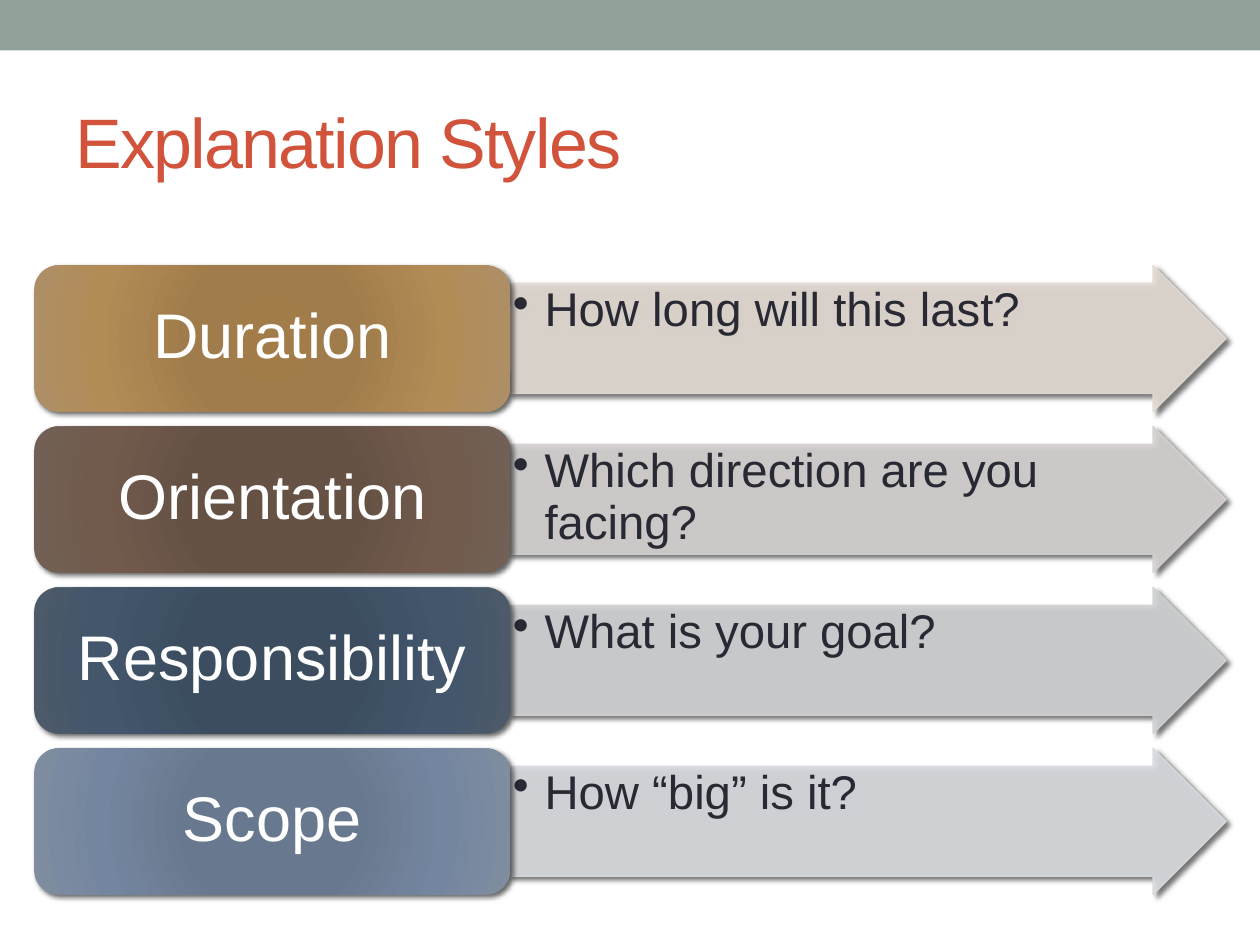
import pptx
import pptx.util
import pptx.dml.color
import pptx.enum.shapes
import pptx.enum.text
import pptx.oxml
import pptx.oxml.ns

Cm, Pt = pptx.util.Cm, pptx.util.Pt
Kind = pptx.enum.shapes.MSO_SHAPE
Anchor = pptx.enum.text.MSO_ANCHOR
Align = pptx.enum.text.PP_ALIGN
NS = pptx.oxml.ns.nsdecls("a")
qn = pptx.oxml.ns.qn

# Content: label, question, gradient colours, arrow colour
TITLE = "Explanation Styles"
ROWS = [
    ("Duration", "How long will this last?",
     ("A37D49", "A07C4C", "B38B55", "AD8F67"), "E3DBD3"),
    ("Orientation", "Which direction are you facing?",
     ("685044", "665145", "725A4D", "726056"), "D5D2D1"),
    ("Responsibility", "What is your goal?",
     ("3B4D61", "3C4D60", "43566B", "4C5A6A"), "D0D2D4"),
    ("Scope", "How “big” is it?",
     ("677790", "68788E", "74869F", "808DA0"), "D8DBDF"),
]
COLORS = {"band": "93A299", "title": "D2533C", "text": "292934",
          "label": "FFFFFF", "shadow": "000000"}
STOPS = (0, 34, 70, 100)

# Grid in centimetres
LEFT, TOP, STEP, HIGH = 0.69, 5.35, 3.245, 2.95
BOX, ARROW = 9.6, 14.43


def rgb(code):
    return pptx.dml.color.RGBColor.from_string(code)


def add(shapes, kind, x, y, w, h):
    shape = shapes.add_shape(kind, Cm(x), Cm(y), Cm(w), Cm(h))
    shape.shadow.inherit = False
    shape.line.fill.background()
    return shape


def shade(shape):
    effect = shape._element.spPr.find(qn("a:effectLst"))
    effect.append(pptx.oxml.parse_xml(
        f'<a:outerShdw {NS} blurRad="{Pt(3)}" dist="{Pt(2)}" dir="2700000" '
        f'rotWithShape="0"><a:srgbClr val="{COLORS["shadow"]}">'
        '<a:alpha val="60000"/></a:srgbClr></a:outerShdw>'))


def blend(shape, codes):
    shape.fill.gradient()
    props = shape._element.spPr
    stops = "".join(f'<a:gs pos="{pos * 1000}"><a:srgbClr val="{code}"/></a:gs>'
                    for pos, code in zip(STOPS, codes))
    props.replace(props.find(qn("a:gradFill")), pptx.oxml.parse_xml(
        f'<a:gradFill {NS} rotWithShape="1"><a:gsLst>{stops}</a:gsLst>'
        '<a:path path="circle"><a:fillToRect l="100000" t="100000" '
        'r="100000" b="100000"/></a:path></a:gradFill>'))


def tint(shape, code):
    shape.fill.solid()
    shape.fill.fore_color.rgb = rgb(code)
    shape.line.color.rgb = rgb(code)
    shape.line.width = Pt(0.75)
    for color in shape._element.spPr.iter(qn("a:srgbClr")):
        color.append(pptx.oxml.parse_xml(f'<a:alpha {NS} val="90000"/>'))


def write(shape, text, size, color, align, anchor, pads=None):
    frame = shape.text_frame
    frame.word_wrap = True
    frame.vertical_anchor = anchor
    if pads:
        (frame.margin_left, frame.margin_top,
         frame.margin_right, frame.margin_bottom) = map(Cm, pads)
    frame.text = text
    para = frame.paragraphs[0]
    para.alignment = align
    font = para.runs[0].font
    font.name, font.size = "Arial", Pt(size)
    font.color.rgb = rgb(color)
    return para


def bullet(para):
    props = para._p.get_or_add_pPr()
    props.set("marL", str(Cm(0.64)))
    props.set("indent", str(-Cm(0.64)))
    props.append(pptx.oxml.parse_xml(f'<a:buChar {NS} char="•"/>'))


deck = pptx.Presentation()
deck.slide_width, deck.slide_height = Cm(25.4), Cm(19.05)
shapes = deck.slides.add_slide(deck.slide_layouts[6]).shapes

# Top band and title
band = add(shapes, Kind.RECTANGLE, 0, 0, 25.4, 1.02)
band.fill.solid()
band.fill.fore_color.rgb = rgb(COLORS["band"])
head = shapes.add_textbox(Cm(1.27), Cm(1.47), Cm(22.86), Cm(2.74))
para = write(head, TITLE, 40, COLORS["title"], Align.LEFT, Anchor.MIDDLE)
para.runs[0]._r.get_or_add_rPr().set("spc", "-100")

# One arrow and one label box per row
for i, (label, ask, codes, pale) in enumerate(ROWS):
    y = TOP + i * STEP
    arrow = add(shapes, Kind.RIGHT_ARROW, LEFT + BOX, y, ARROW, HIGH)
    arrow.adjustments[0], arrow.adjustments[1] = 0.75, 0.5
    tint(arrow, pale)
    shade(arrow)
    para = write(arrow, ask, 27, COLORS["text"], Align.LEFT, Anchor.TOP,
                 (0.05, 0.05, 0.8, 0.05))
    para.line_spacing = 0.9
    bullet(para)

    box = add(shapes, Kind.ROUNDED_RECTANGLE, LEFT, y, BOX, HIGH)
    blend(box, codes)
    shade(box)
    para = write(box, label, 36, COLORS["label"], Align.CENTER, Anchor.MIDDLE,
                 (0.38, 0.19, 0.38, 0.19))
    para.line_spacing = 0.9

deck.save("out.pptx")
